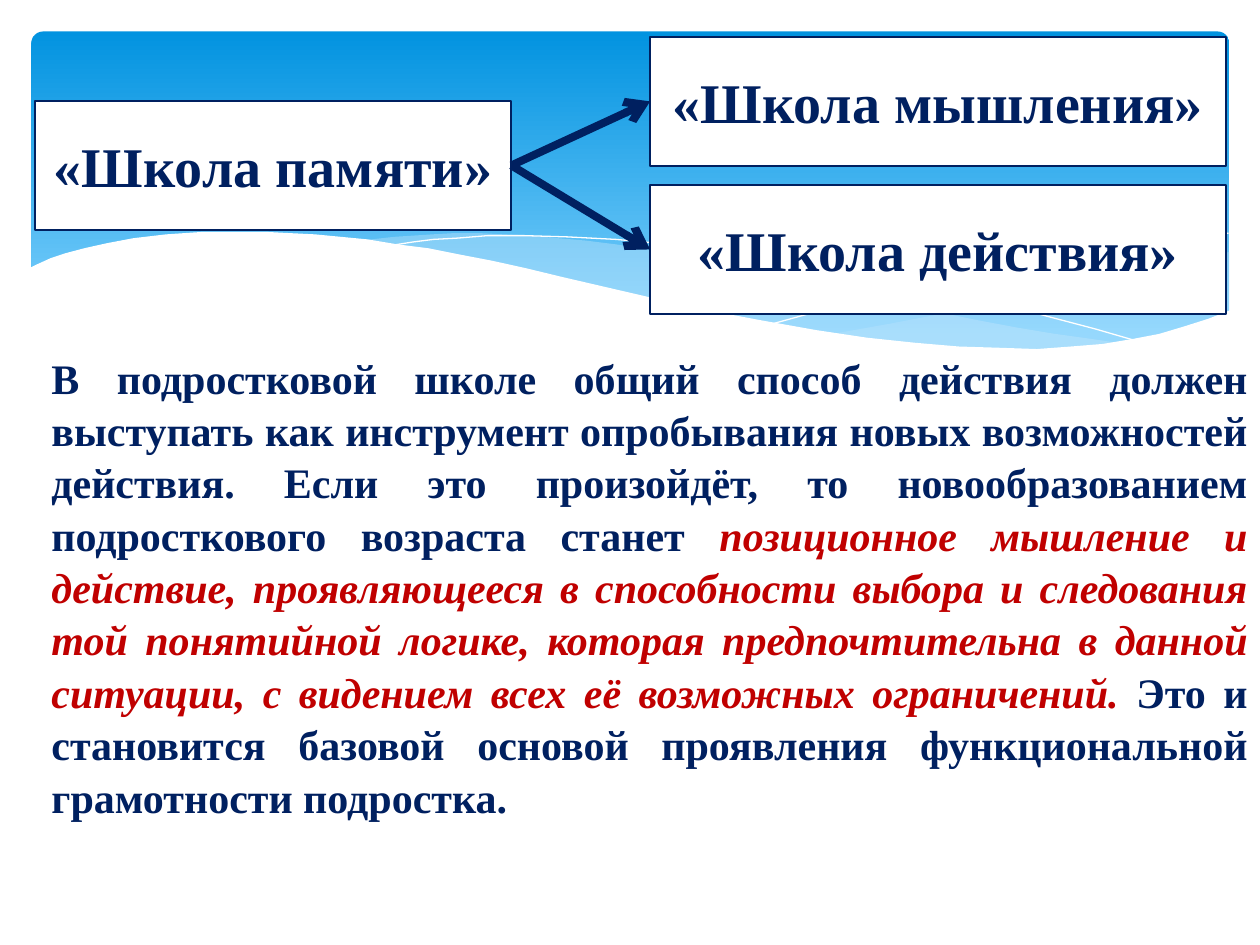
from lxml import etree
from pptx import Presentation
from pptx import util as u
from pptx.dml.color import RGBColor
from pptx.enum import shapes, text
from pptx.oxml import ns

NAVY, RED, WHITE, MIST = "002060", "C00000", "FFFFFF", "C6E7FC"
FONT = "Times New Roman"


def color(hex_string):
    return RGBColor.from_string(hex_string)


def format_run(run, size, hex_string, italic=False):
    run.font.name = FONT
    run.font.size = u.Pt(size)
    run.font.bold = True
    run.font.italic = italic
    run.font.color.rgb = color(hex_string)


presentation = Presentation()
presentation.slide_width, presentation.slide_height = u.Pt(720), u.Pt(540)
slide = presentation.slides.add_slide(presentation.slide_layouts[6])

banner = slide.shapes.add_shape(
    shapes.MSO_SHAPE.ROUNDED_RECTANGLE, u.Pt(18), u.Pt(18), u.Pt(684.5), u.Pt(194.5))
banner.adjustments[0] = 0.034
banner.shadow.inherit = False
banner.line.fill.background()
banner.fill.gradient()
banner.fill.gradient_angle = 270
for stop, position, hex_string in zip(banner.fill.gradient_stops, (0, 0.9), ("0293E0", "83D3FE")):
    stop.position = position
    stop.color.rgb = color(hex_string)

right_wave = [
    (976, 200), (948, 204), (921, 210), (891, 216), (861, 223), (805, 237), (753, 248),
    (706, 257), (661, 265), (691, 269), (719, 272), (745, 275), (769, 277), (803, 278),
    (835, 277), (863, 275), (889, 272), (913, 267), (935, 262), (949, 257), (963, 252), (976, 247)]
middle_wave = [
    (893, 273), (866, 269), (837, 265), (807, 260), (775, 254), (741, 247), (706, 240),
    (668, 231), (629, 222), (598, 214), (569, 208), (541, 203), (514, 198), (489, 194),
    (465, 191), (442, 189), (420, 187), (399, 186), (380, 185), (361, 185), (344, 186),
    (313, 188), (286, 191), (323, 196), (362, 203), (404, 211), (449, 222), (491, 232),
    (530, 240), (566, 248), (601, 255), (634, 261), (665, 266), (695, 270), (722, 274),
    (748, 276), (773, 277), (796, 278), (838, 278), (867, 276)]
long_curve = [
    (309, 195), (328, 192), (344, 190), (363, 189), (387, 187), (416, 187), (450, 188),
    (489, 190), (533, 194), (582, 200), (608, 204), (636, 208), (665, 213), (695, 219),
    (727, 226), (760, 233), (795, 241), (831, 251), (869, 261), (907, 272)]
short_curve = [
    (613, 257), (653, 246), (695, 235), (748, 223), (806, 210), (836, 204), (866, 199),
    (895, 194), (924, 190), (951, 187), (975, 185)]
white_wave = [
    (977, 246), (959, 253), (940, 259), (920, 265), (899, 269), (875, 273), (850, 275),
    (823, 277), (793, 276), (761, 275), (726, 272), (688, 268), (648, 262), (603, 254),
    (555, 245), (503, 233), (447, 220), (418, 213), (391, 207), (365, 202), (340, 197),
    (316, 194), (292, 190), (271, 188), (250, 186), (230, 185), (211, 184), (161, 184),
    (132, 186), (106, 189), (85, 193), (67, 197), (52, 201), (40, 205), (29, 210),
    (23, 213), (23, 329), (977, 329)]

waves = [
    (right_wave, MIST, 29), (middle_wave, MIST, 40),
    (long_curve, None, 100), (short_curve, None, 100), (white_wave, WHITE, 100)]
for points, fill, opacity in waves:
    builder = slide.shapes.build_freeform(*points[0], scale=u.Pt(0.72))
    builder.add_line_segments(points[1:], close=fill is not None)
    wave = builder.convert_to_shape()
    wave.shadow.inherit = False
    if fill is None:
        wave.fill.background()
        wave.line.color.rgb = color(WHITE)
        wave.line.width = u.Pt(0)
        continue
    wave.line.fill.background()
    wave.fill.solid()
    wave.fill.fore_color.rgb = color(fill)
    if opacity < 100:
        fill_color = wave.element.spPr.find(".//" + ns.qn("a:srgbClr"))
        etree.SubElement(fill_color, ns.qn("a:alpha"), val=str(opacity * 1000))

body = slide.shapes.add_textbox(u.Pt(22.3), u.Pt(196.5), u.Pt(697.7), u.Pt(269.3))
body.text_frame.word_wrap = True
paragraph = body.text_frame.paragraphs[0]
paragraph.alignment = text.PP_ALIGN.JUSTIFY
paragraph.line_spacing = 1.04
passages = [
    ("В подростковой школе общий способ действия должен выступать как инструмент "
     "опробывания новых возможностей действия. Если это произойдёт, то новообразованием "
     "подросткового возраста станет ", NAVY, False),
    ("позиционное мышление и действие, проявляющееся в способности выбора и следования "
     "той понятийной логике, которая предпочтительна в данной ситуации, с видением всех "
     "её возможных ограничений. ", RED, True),
    ("Это и становится базовой основой проявления функциональной грамотности подростка.",
     NAVY, False)]
for words, hex_string, italic in passages:
    run = paragraph.add_run()
    run.text = words
    format_run(run, 24, hex_string, italic)

schools = [
    ("«Школа памяти»", 20, 57.8, 272.2),
    ("«Школа мышления»", 371.5, 21.2, 329),
    ("«Школа действия»", 371.5, 105.8, 329)]
boxes = []
for label, left, top, width in schools:
    box = slide.shapes.add_shape(
        shapes.MSO_SHAPE.RECTANGLE, u.Pt(left), u.Pt(top), u.Pt(width), u.Pt(73.5))
    box.shadow.inherit = False
    box.fill.solid()
    box.fill.fore_color.rgb = color(WHITE)
    box.line.color.rgb = color(NAVY)
    box.line.width = u.Pt(1.25)
    box.text_frame.text = label
    box.text_frame.word_wrap = True
    box.text_frame.vertical_anchor = text.MSO_ANCHOR.MIDDLE
    box.text_frame.paragraphs[0].alignment = text.PP_ALIGN.CENTER
    format_run(box.text_frame.paragraphs[0].runs[0], 32, NAVY)
    boxes.append(box)

memory, *targets = boxes
for target in targets:
    arrow = slide.shapes.add_connector(shapes.MSO_CONNECTOR.STRAIGHT, 0, 0, 0, 0)
    arrow.begin_connect(memory, 3)
    arrow.end_connect(target, 1)
    arrow.line.color.rgb = color(NAVY)
    arrow.line.width = u.Pt(4.5)
    etree.SubElement(arrow.line._get_or_add_ln(), ns.qn("a:tailEnd"), type="arrow")
    etree.SubElement(arrow.element.spPr, ns.qn("a:effectLst"))

presentation.save("out.pptx")
